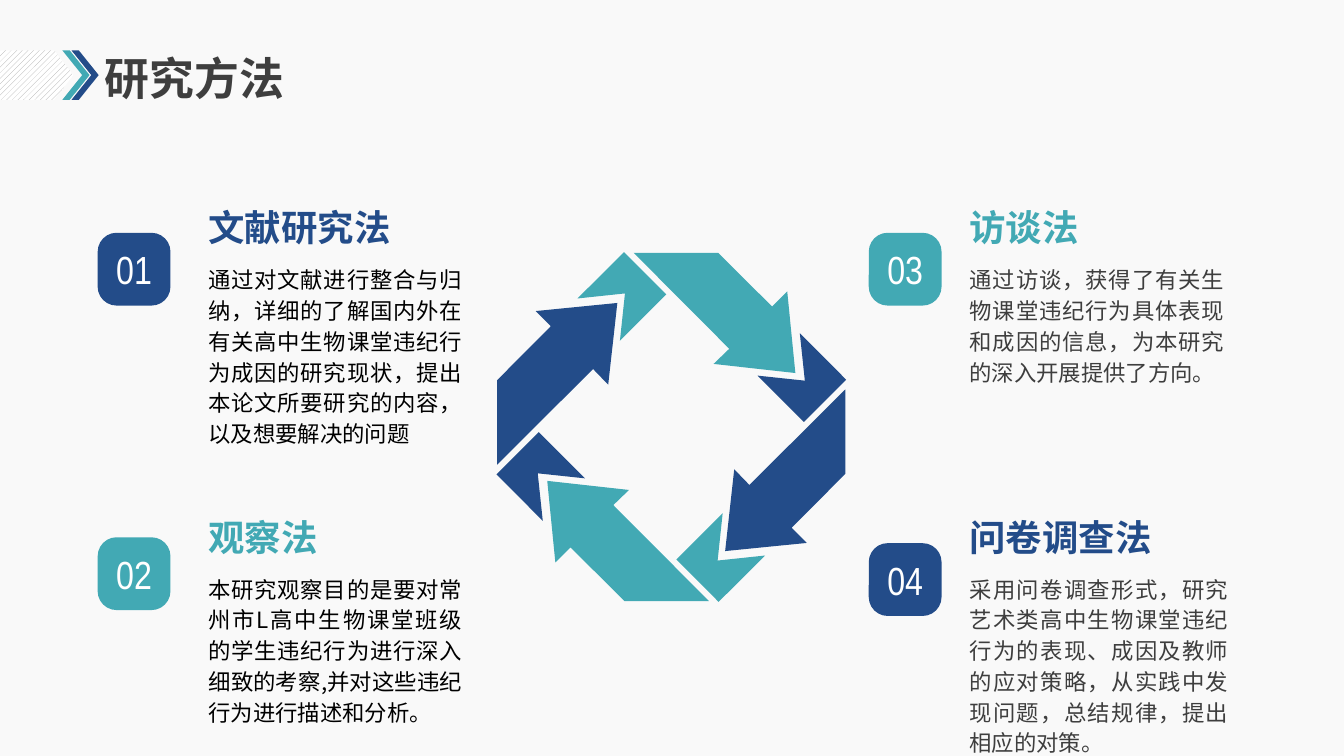
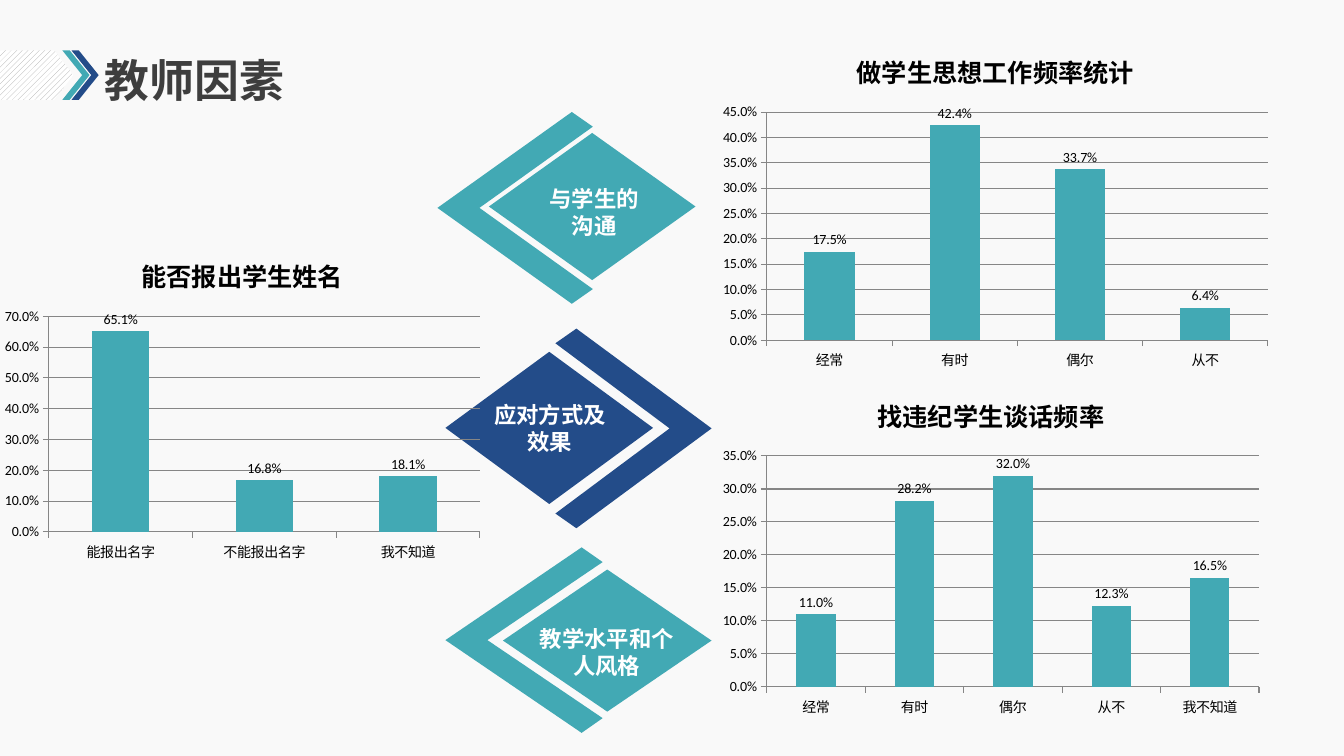
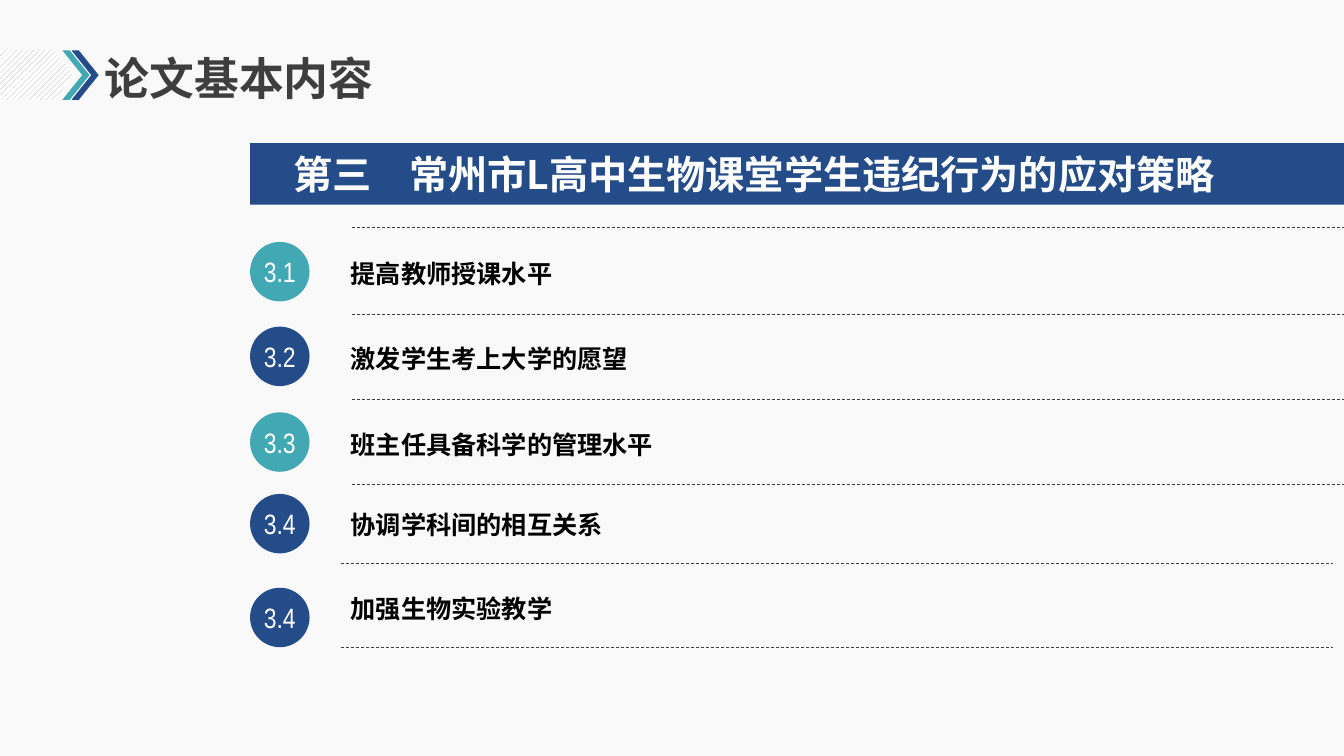
from lxml.etree import SubElement
from pptx import Presentation
from pptx.chart.data import CategoryChartData
from pptx.dml.color import RGBColor
from pptx.enum.chart import XL_CHART_TYPE, XL_LABEL_POSITION, XL_TICK_MARK
from pptx.enum.dml import MSO_LINE, MSO_PATTERN
from pptx.enum.lang import MSO_LANGUAGE_ID
from pptx.enum.shapes import MSO_CONNECTOR, MSO_SHAPE
from pptx.enum.text import MSO_ANCHOR, PP_ALIGN
from pptx.oxml.ns import qn
from pptx.util import Pt

COLOURS = {
    "teal": "42A9B4",
    "navy": "234C89",
    "ink": "3E3E3E",
    "black": "000000",
    "white": "FFFFFF",
    "paper": "F9F9F9",
    "hatch": "A6A6A6",
    "grid": "868686",
}
TEXT_FONT = "Noto Sans CJK SC"
TITLE_FONT = "Cabin"
NUMBER_FONT = "Arial Narrow"
CHART_FONT = "Calibri"


def colour(name):
    return RGBColor.from_string(COLOURS[name])


def write_text(frame, text, size=16, font=TEXT_FONT, color="black", bold=False,
               align=PP_ALIGN.LEFT, anchor=MSO_ANCHOR.TOP, spacing=None, insets=(0, 0, 0, 0)):
    frame.word_wrap = True
    frame.vertical_anchor = anchor
    frame.margin_left, frame.margin_top, frame.margin_right, frame.margin_bottom = map(Pt, insets)
    paragraph = frame.paragraphs[0]
    paragraph.alignment = align
    paragraph.line_spacing = spacing
    run = paragraph.add_run()
    run.text = text
    run.font.size = Pt(size)
    run.font.bold = bold
    run.font.color.rgb = colour(color)
    run.font.language_id = MSO_LANGUAGE_ID.SIMPLIFIED_CHINESE
    run.font.name = font
    SubElement(run.font._element, qn("a:ea")).set("typeface", CHART_FONT)


class Deck:
    """Holds the shared style and the slide being built."""

    def __init__(self):
        self.presentation = Presentation()
        self.presentation.slide_width = Pt(960)
        self.presentation.slide_height = Pt(540)
        self.slide = None

    def add_slide(self, title, title_top=39.6):
        self.slide = self.presentation.slides.add_slide(self.presentation.slide_layouts[6])
        background = self.slide.background.fill
        background.solid()
        background.fore_color.rgb = colour("paper")
        band = self.shape(MSO_SHAPE.PENTAGON, 0, 36, 52.5, 35.3, "white", adjustment=0.39)
        band.fill.patterned()
        band.fill.pattern = MSO_PATTERN.WIDE_UPWARD_DIAGONAL
        band.fill.fore_color.rgb = colour("hatch")
        band.fill.back_color.rgb = colour("white")
        for left, fill in ((44.6, "teal"), (51.1, "navy")):
            self.shape(MSO_SHAPE.CHEVRON, left, 36, 19.4, 35.3, fill, adjustment=0.73)
        self.text(title, 67.7, title_top, 372, 36, size=32, font=TITLE_FONT, color="ink", bold=True,
                  anchor=MSO_ANCHOR.MIDDLE, spacing=0.9, insets=(7.2, 3.6, 7.2, 3.6))

    def paint(self, shape, fill):
        shape.shadow.inherit = False
        shape.fill.solid()
        shape.fill.fore_color.rgb = colour(fill)
        shape.line.fill.background()
        return shape

    def shape(self, kind, left, top, width, height, fill, adjustment=None):
        shape = self.slide.shapes.add_shape(kind, Pt(left), Pt(top), Pt(width), Pt(height))
        if adjustment is not None:
            shape.adjustments[0] = adjustment
        return self.paint(shape, fill)

    def outline(self, points, fill):
        points = [(Pt(x), Pt(y)) for x, y in points]
        builder = self.slide.shapes.build_freeform(*points[0], scale=1.0)
        builder.add_line_segments(points[1:], close=True)
        return self.paint(builder.convert_to_shape(), fill)

    def text(self, text, left, top, width, height, **style):
        box = self.slide.shapes.add_textbox(Pt(left), Pt(top), Pt(width), Pt(height))
        write_text(box.text_frame, text, **style)

    def badge(self, kind, text, left, top, side, fill, size, adjustment=None):
        badge = self.shape(kind, left, top, side, side, fill, adjustment)
        write_text(badge.text_frame, text, size=size, font=NUMBER_FONT, color="white",
                   align=PP_ALIGN.CENTER, anchor=MSO_ANCHOR.MIDDLE)

    def dashed_line(self, left, top, width):
        line = self.slide.shapes.add_connector(
            MSO_CONNECTOR.STRAIGHT, Pt(left), Pt(top), Pt(left + width), Pt(top))
        line.line.color.rgb = colour("ink")
        line.line.width = Pt(0.5)
        line.line.dash_style = MSO_LINE.DASH
        SubElement(line._element.spPr, qn("a:effectLst"))

    def bracket(self, left, top, width, height, fill, flip=False):
        right, bottom, middle = left + width, top + height, top + height / 2
        points = [(right - 15, top), (right, top + 10.5), (left + 30, middle),
                  (right, bottom - 10.5), (right - 15, bottom), (left, middle)]
        if flip:
            points = [(left + right - x, y) for x, y in points]
        self.outline(points, fill)

    def column_chart(self, title, values, maximum, step, left, top, width, height):
        data = CategoryChartData(number_format="0.0%")
        data.categories = list(values)
        data.add_series("Series 1", list(values.values()))
        chart = self.slide.shapes.add_chart(
            XL_CHART_TYPE.COLUMN_CLUSTERED, Pt(left), Pt(top), Pt(width), Pt(height), data).chart
        chart.font.size = Pt(10)
        chart.font.name = CHART_FONT
        chart.font.color.rgb = colour("black")
        chart.has_legend = False
        chart.has_title = True
        chart.chart_title.include_in_layout = False
        run = chart.chart_title.text_frame.paragraphs[0].add_run()
        run.text = title
        run.font.size = Pt(18)
        run.font.bold = True
        run.font.name = CHART_FONT
        run.font.color.rgb = colour("black")
        for axis in (chart.category_axis, chart.value_axis):
            axis.major_tick_mark = XL_TICK_MARK.OUTSIDE
            axis.format.line.color.rgb = colour("grid")
        axis = chart.value_axis
        axis.minimum_scale, axis.maximum_scale, axis.major_unit = 0, maximum, step
        axis.major_gridlines.format.line.color.rgb = colour("grid")
        axis.tick_labels.number_format = "0.0%"
        axis.tick_labels.number_format_is_linked = False
        plot = chart.plots[0]
        plot.gap_width = 150
        plot.vary_by_categories = False
        plot.series[0].format.fill.solid()
        plot.series[0].format.fill.fore_color.rgb = colour("teal")
        plot.has_data_labels = True
        labels = plot.data_labels
        labels.show_value = True
        labels.position = XL_LABEL_POSITION.OUTSIDE_END
        labels.number_format = "0.0%"
        labels.number_format_is_linked = False


def build_methods(deck):
    deck.add_slide("研究方法")
    methods = [
        ("01", "文献研究法", "通过对文献进行整合与归纳，详细的了解国内外在有关高中生物课堂违纪行为成因的研究现状，提出本论文所要研究的内容，以及想要解决的问题",
         "navy", "black", 69.8, 166.3, 146.9, 181),
        ("02", "观察法", "本研究观察目的是要对常州市L高中生物课堂班级的学生违纪行为进行深入细致的考察,并对这些违纪行为进行描述和分析。",
         "teal", "black", 69.8, 383.8, 367.9, 181),
        ("03", "访谈法", "通过访谈，获得了有关生物课堂违纪行为具体表现和成因的信息，为本研究的深入开展提供了方向。",
         "teal", "ink", 620.6, 166.3, 146.9, 182),
        ("04", "问卷调查法", "采用问卷调查形式，研究艺术类高中生物课堂违纪行为的表现、成因及教师的应对策略，从实践中发现问题，总结规律，提出相应的对策。",
         "navy", "ink", 620.6, 388, 367.9, 185),
    ]
    for number, name, body, fill, ink, left, badge_top, top, width in methods:
        text_left = left + (79.2 if left < 480 else 72)
        deck.badge(MSO_SHAPE.ROUNDED_RECTANGLE, number, left, badge_top, 52, fill, 28, 0.26)
        deck.text(name, text_left, top, 177, 31.7, size=26, color=fill, bold=True)
        deck.text(body, text_left, top + 40.5, width, 133, color=ink,
                  align=PP_ALIGN.JUSTIFY, spacing=Pt(22))

    center_x, center_y = 479.5, 305
    tail = [(-67, -91.8), (-33.8, -124.9), (-3.6, -94.7), (-36.7, -61.6), (-33.1, -95.4)]
    arrow = [(82.8, -96.8), (88.6, -38.5), (30.2, -45), (41.4, -55.8), (-26.9, -124.4),
             (33.4, -124.4), (72, -86)]
    for fill in ("teal", "navy", "teal", "navy"):
        for points in (tail, arrow):
            deck.outline([(center_x + x, center_y + y) for x, y in points], fill)
        tail, arrow = ([(-y, x) for x, y in points] for points in (tail, arrow))


def build_teacher_factors(deck):
    deck.add_slide("教师因素", title_top=41)
    factors = [
        ("与学生的沟通", "teal", False, (312.5, 80, 111, 137), (349.2, 95, 147.6, 105.1), (386, 132.5, 77)),
        ("教学水平和个人风格", "teal", True, (318.2, 391, 112.3, 132.5), (359.3, 406.8, 149, 101.5), (384.5, 446.4, 98)),
        ("应对方式及效果", "navy", True, (396.7, 234.7, 111.6, 142.6), (318.2, 251.3, 148.3, 108.7), (350, 286.6, 85.7)),
    ]
    for name, fill, _, bracket, diamond, label in factors:
        left, top, width = label
        deck.bracket(*bracket, fill, flip=fill == "navy")
        deck.shape(MSO_SHAPE.FLOWCHART_DECISION, *diamond, fill)
        deck.text(name, left, top, width, 39, color="white", bold=True, align=PP_ALIGN.CENTER)
    deck.column_chart("能否报出学生姓名", {"能报出名字": 0.651, "不能报出名字": 0.168, "我不知道": 0.181},
                      0.7, 0.1, -3.6, 170, 353.5, 236)
    deck.column_chart("做学生思想工作频率统计", {"经常": 0.175, "有时": 0.424, "偶尔": 0.337, "从不": 0.064},
                      0.45, 0.05, 508.3, 23.8, 405.4, 245.5)
    deck.column_chart("找违纪学生谈话频率",
                      {"经常": 0.11, "有时": 0.282, "偶尔": 0.32, "从不": 0.123, "我不知道": 0.165},
                      0.35, 0.05, 508.3, 269.3, 399, 247.7)


def build_contents(deck):
    deck.add_slide("论文基本内容")
    banner = deck.shape(MSO_SHAPE.RECTANGLE, 178.6, 102.2, 781.4, 44, "navy")
    heading = {"size": 28, "color": "white", "bold": True, "anchor": MSO_ANCHOR.MIDDLE}
    write_text(banner.text_frame, "第三", insets=(31, 0, 0, 0), **heading)
    deck.text("常州市L高中生物课堂学生违纪行为的应对策略", 280.8, 102.2, 650, 44,
              align=PP_ALIGN.JUSTIFY, insets=(11.5, 0, 0, 0), **heading)
    deck.dashed_line(251.3, 162.5, 708.7)
    strategies = [
        ("3.1", "提高教师授课水平", "teal", 172.8, 180.7, 251.3, 224.6),
        ("3.2", "激发学生考上大学的愿望", "navy", 233.3, 241.2, 251.3, 285.1),
        ("3.3", "班主任具备科学的管理水平", "teal", 294.5, 302.4, 251.3, 346.3),
        ("3.4", "协调学科间的相互关系", "navy", 352.8, 360, 243.4, 402.5),
        ("3.4", "加强生物实验教学", "navy", 419.8, 419.8, 243.4, 462.2),
    ]
    for number, name, fill, badge_top, text_top, line_left, line_top in strategies:
        deck.badge(MSO_SHAPE.OVAL, number, 178.6, badge_top, 42.5, fill, 20)
        deck.text(name, 243.4, text_top, 587.5, 29.5, size=18, bold=True, spacing=Pt(22),
                  insets=(7.2, 3.6, 7.2, 3.6))
        deck.dashed_line(line_left, line_top, 708.7)


def main():
    deck = Deck()
    build_methods(deck)
    build_teacher_factors(deck)
    build_contents(deck)
    deck.presentation.save("out.pptx")


if __name__ == "__main__":
    main()
